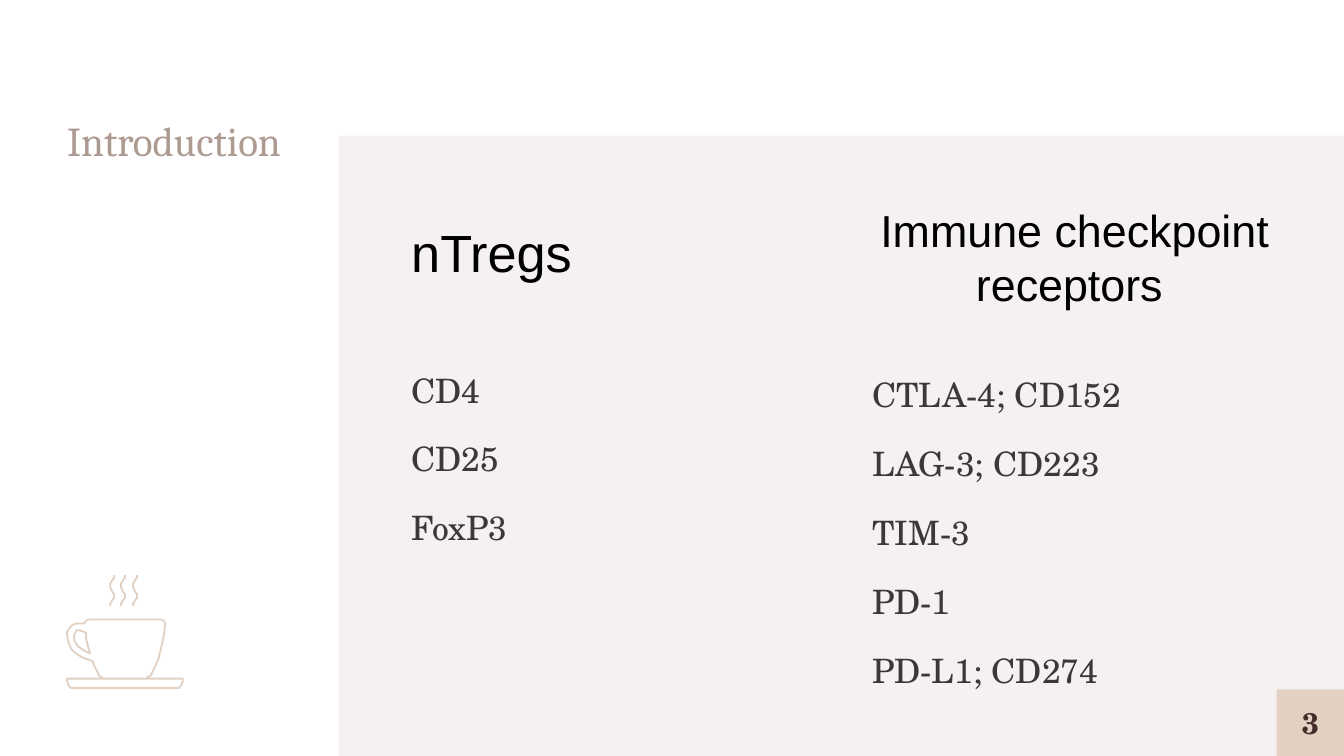
from dataclasses import dataclass

from pptx import Presentation
from pptx.dml.color import RGBColor
from pptx.enum import shapes, text
from pptx.util import Inches, Pt


@dataclass(frozen=True)
class Font:
    face: str
    size: float
    color: str
    bold: bool = False


@dataclass(frozen=True)
class Theme:
    panel: str = "F5F1F0"
    accent: str = "E2D1C2"
    line: float = 0.96
    title: Font = Font("Cambria", 22, "AD9B91")
    left: Font = Font("Arial", 28, "000000")
    right: Font = Font("Arial", 24, "000000")
    space: Font = Font("Arial", 20, "000000")
    item: Font = Font("TeX Gyre Schola", 18, "3A3838")
    page: Font = Font("TeX Gyre Schola", 16, "462B2B", True)


@dataclass(frozen=True)
class Box:
    left: float
    top: float
    width: float
    height: float

    def emu(self) -> list:
        return [Inches(v) for v in (self.left, self.top, self.width, self.height)]


@dataclass(frozen=True)
class Column:
    box: Box
    head: tuple
    align: text.PP_ALIGN
    pitch: float
    gap: float
    items: tuple


@dataclass(frozen=True)
class Stroke:
    points: tuple
    closed: bool = False


THEME = Theme()
LEFT, CENTER = text.PP_ALIGN.LEFT, text.PP_ALIGN.CENTER

COLUMNS = (
    Column(Box(3.06, 1.57, 3.01, 3.62), (("nTregs", THEME.left),),
           LEFT, 1.15, 43, ("CD4", "CD25", "FoxP3")),
    Column(Box(6.49, 1.51, 3.01, 3.62),
           (("Immune checkpoint receptors", THEME.right), (" ", THEME.space)),
           CENTER, 1, 31,
           ("CTLA-4; CD152", "LAG-3; CD223", "TIM-3", "PD-1", "PD-L1; CD274")),
)

CUP = Stroke((
    (1.09, 5.04), (1.12, 5.03), (1.15, 4.97), (1.18, 4.9), (1.2, 4.82),
    (1.22, 4.73), (1.23, 4.64), (1.22, 4.62), (1.2, 4.61), (0.66, 4.61),
    (0.64, 4.62), (0.63, 4.64), (0.6, 4.64), (0.57, 4.64), (0.54, 4.65),
    (0.52, 4.67), (0.5, 4.7), (0.5, 4.73), (0.51, 4.78), (0.53, 4.83),
    (0.56, 4.86), (0.61, 4.89), (0.66, 4.91), (0.69, 4.92), (0.7, 4.95),
    (0.74, 5.03), (0.75, 5.04), (0.77, 5.04)))
HANDLE = Stroke((
    (0.55, 4.73), (0.56, 4.71), (0.57, 4.69), (0.59, 4.69), (0.62, 4.7),
    (0.64, 4.71), (0.64, 4.75), (0.66, 4.83), (0.67, 4.86), (0.64, 4.85),
    (0.61, 4.83), (0.58, 4.81), (0.56, 4.78), (0.55, 4.75)), True)
SAUCER = Stroke((
    (1.31, 5.12), (0.55, 5.12), (0.53, 5.12), (0.51, 5.1), (0.5, 5.07),
    (0.5, 5.05), (1.36, 5.05), (1.36, 5.07), (1.35, 5.1), (1.33, 5.12)), True)
STEAM = (
    (0.03, 4.28), (0.03, 4.3), (0.02, 4.31), (0.01, 4.33), (0, 4.34),
    (0, 4.37), (0.01, 4.39), (0.02, 4.41), (0.03, 4.42), (0.03, 4.45),
    (0.02, 4.46), (0.01, 4.48), (0, 4.49), (0, 4.51))
STEAMS = tuple(Stroke(tuple((x + left, y) for x, y in STEAM))
               for left in (0.9, 0.82, 0.99))


def tint(value: str) -> RGBColor:
    return RGBColor.from_string(value)


def frame(shape, anchor=text.MSO_ANCHOR.TOP):
    body = shape.text_frame
    body.word_wrap = True
    body.auto_size = text.MSO_AUTO_SIZE.NONE
    body.vertical_anchor = anchor
    body.margin_left = body.margin_right = 0
    body.margin_top = body.margin_bottom = 0
    return body


def write(para, words: str, font: Font, align=LEFT, pitch: float = 1) -> None:
    para.alignment = align
    para.line_spacing = pitch
    run = para.add_run()
    run.text = words
    run.font.name = font.face
    run.font.size = Pt(font.size)
    run.font.bold = font.bold
    run.font.color.rgb = tint(font.color)


def block(slide, box: Box, color: str):
    shape = slide.shapes.add_shape(shapes.MSO_SHAPE.RECTANGLE, *box.emu())
    shape.shadow.inherit = False
    shape.fill.solid()
    shape.fill.fore_color.rgb = tint(color)
    shape.line.fill.background()
    return shape


def column(slide, col: Column) -> None:
    body = frame(slide.shapes.add_textbox(*col.box.emu()))
    for words, font in col.head:
        write(body.paragraphs[0], words, font, col.align, col.pitch)
    for i, item in enumerate(col.items):
        para = body.add_paragraph()
        write(para, item, THEME.item, LEFT, 1.15)
        para.space_before = Pt(6 if i else col.gap)
        para.space_after = Pt(6)


def draw(group, stroke: Stroke) -> None:
    first, *rest = [(Inches(x), Inches(y)) for x, y in stroke.points]
    pen = group.shapes.build_freeform(*first)
    pen.add_line_segments(rest, close=stroke.closed)
    shape = pen.convert_to_shape()
    shape.shadow.inherit = False
    shape.fill.background()
    shape.line.color.rgb = tint(THEME.accent)
    shape.line.width = Pt(THEME.line)


def main() -> None:
    deck = Presentation()
    deck.slide_width = Inches(10)
    deck.slide_height = deck.slide_width * 9 // 16
    slide = deck.slides.add_slide(deck.slide_layouts[5])

    title = slide.shapes.title
    title.left, title.top, title.width, title.height = Box(0.5, 0.9, 1.78, 4.23).emu()
    write(frame(title).paragraphs[0], "Introduction", THEME.title, LEFT, 0.9)

    block(slide, Box(2.52, 1.01, 7.48, 4.62), THEME.panel)
    for col in COLUMNS:
        column(slide, col)

    page = block(slide, Box(9.5, 5.13, 0.5, 0.5), THEME.accent)
    write(frame(page, text.MSO_ANCHOR.MIDDLE).paragraphs[0], "3", THEME.page, CENTER)

    icon = slide.shapes.add_group_shape()
    for stroke in (CUP, HANDLE, SAUCER, *STEAMS):
        draw(icon, stroke)

    deck.save("out.pptx")


if __name__ == "__main__":
    main()
